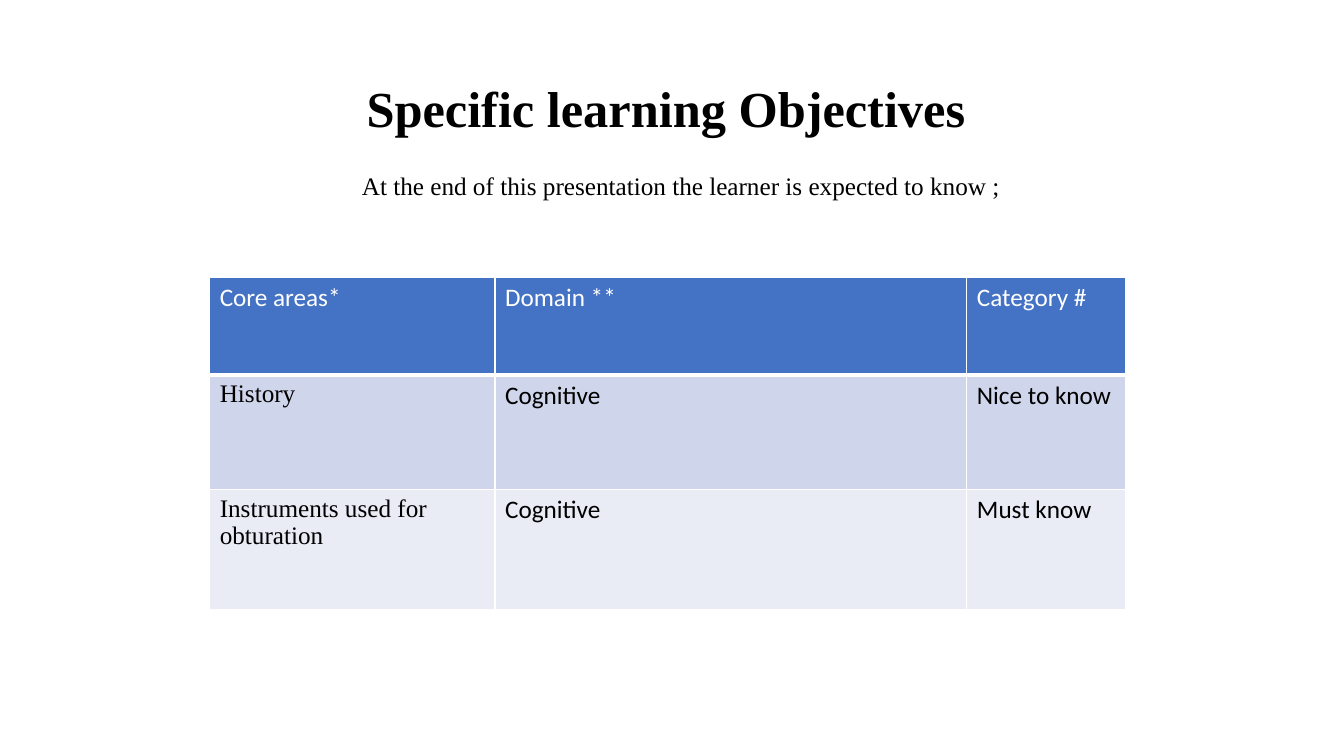
import dataclasses

import pptx
import pptx.dml.color
import pptx.enum.text
import pptx.oxml.ns
import pptx.util
import lxml.etree


@dataclasses.dataclass(frozen=True)
class Theme:
    serif: str = "Times New Roman"
    sans: str = "Calibri"
    title_size: int = 36
    body_size: int = 18
    ink: str = "000000"
    paper: str = "FFFFFF"
    header_fill: str = "4472C4"
    band_fills: tuple = ("CFD5EA", "E9EBF5")
    thin: int = 1
    thick: int = 3


@dataclasses.dataclass(frozen=True)
class Box:
    left: float
    top: float
    width: float
    height: float

    def lengths(self):
        return [pptx.util.Inches(length) for length in dataclasses.astuple(self)]


THEME = Theme()
WIDTH, HEIGHT = 13.33, 7.5
COLUMN_SHARES = (2.83, 4.68, 1.57)
ROW_SHARES = (0.97, 1.13, 1.19)
OBJECTIVES = (
    ("Core areas*", "Domain **", "Category #"),
    ("History", "Cognitive", "Nice to know"),
    ("Instruments used for obturation", "Cognitive", "Must know"),
)


def color(code):
    return pptx.dml.color.RGBColor.from_string(code)


def add_run(para, text, font, size, code, bold=False):
    span = para.add_run()
    span.text = text
    span.font.name = font
    span.font.size = pptx.util.Pt(size)
    span.font.bold = bold
    span.font.color.rgb = color(code)


def add_centred_text(page, box, text, size, anchor, bold=False, space_before=0):
    frame = page.shapes.add_textbox(*box.lengths()).text_frame
    frame.word_wrap = True
    frame.vertical_anchor = anchor
    para = frame.paragraphs[0]
    para.alignment = pptx.enum.text.PP_ALIGN.CENTER
    para.line_spacing = 0.9
    para.space_before = pptx.util.Pt(space_before)
    add_run(para, text, THEME.serif, size, THEME.ink, bold)


def add_borders(cell, bottom_width):
    properties = cell._tc.get_or_add_tcPr()
    widths = {"L": THEME.thin, "R": THEME.thin, "T": THEME.thin, "B": bottom_width}
    for side, width in widths.items():
        line = lxml.etree.SubElement(
            properties, pptx.oxml.ns.qn(f"a:ln{side}"), w=str(pptx.util.Pt(width))
        )
        fill = lxml.etree.SubElement(line, pptx.oxml.ns.qn("a:solidFill"))
        lxml.etree.SubElement(fill, pptx.oxml.ns.qn("a:srgbClr"), val=THEME.paper)


def fill_cell(cell, text, row, column):
    header = row == 0
    add_borders(cell, THEME.thick if header else THEME.thin)
    cell.fill.solid()
    band = THEME.band_fills[(row - 1) % len(THEME.band_fills)]
    cell.fill.fore_color.rgb = color(THEME.header_fill if header else band)
    font = THEME.serif if column == 0 and not header else THEME.sans
    ink = THEME.paper if header else THEME.ink
    add_run(cell.text_frame.paragraphs[0], text, font, THEME.body_size, ink)


def add_objectives_table(page, box):
    table = page.shapes.add_table(
        len(ROW_SHARES), len(COLUMN_SHARES), *box.lengths()
    ).table
    for column, share in zip(table.columns, COLUMN_SHARES):
        column.width = pptx.util.Inches(box.width * share / sum(COLUMN_SHARES))
    for row, share in zip(table.rows, ROW_SHARES):
        row.height = pptx.util.Inches(box.height * share / sum(ROW_SHARES))
    for row, texts in enumerate(OBJECTIVES):
        for column, text in enumerate(texts):
            fill_cell(table.cell(row, column), text, row, column)


def build_objectives_slide(page):
    anchor = pptx.enum.text.MSO_ANCHOR
    add_centred_text(
        page, Box(2.42, 0.42, 8.5, 1), "Specific learning Objectives ",
        THEME.title_size, anchor.BOTTOM, bold=True,
    )
    add_centred_text(
        page, Box(2.42, 1.67, 8.67, 5.17),
        "At the end of this presentation the learner is expected to know ;",
        THEME.body_size, anchor.TOP, space_before=10,
    )
    add_objectives_table(page, Box(2.08, 2.75, 9.08, 3.3))


def main():
    deck = pptx.Presentation()
    deck.slide_width = pptx.util.Inches(WIDTH)
    deck.slide_height = pptx.util.Inches(HEIGHT)
    build_objectives_slide(deck.slides.add_slide(deck.slide_layouts[6]))
    deck.save("out.pptx")


if __name__ == "__main__":
    main()
